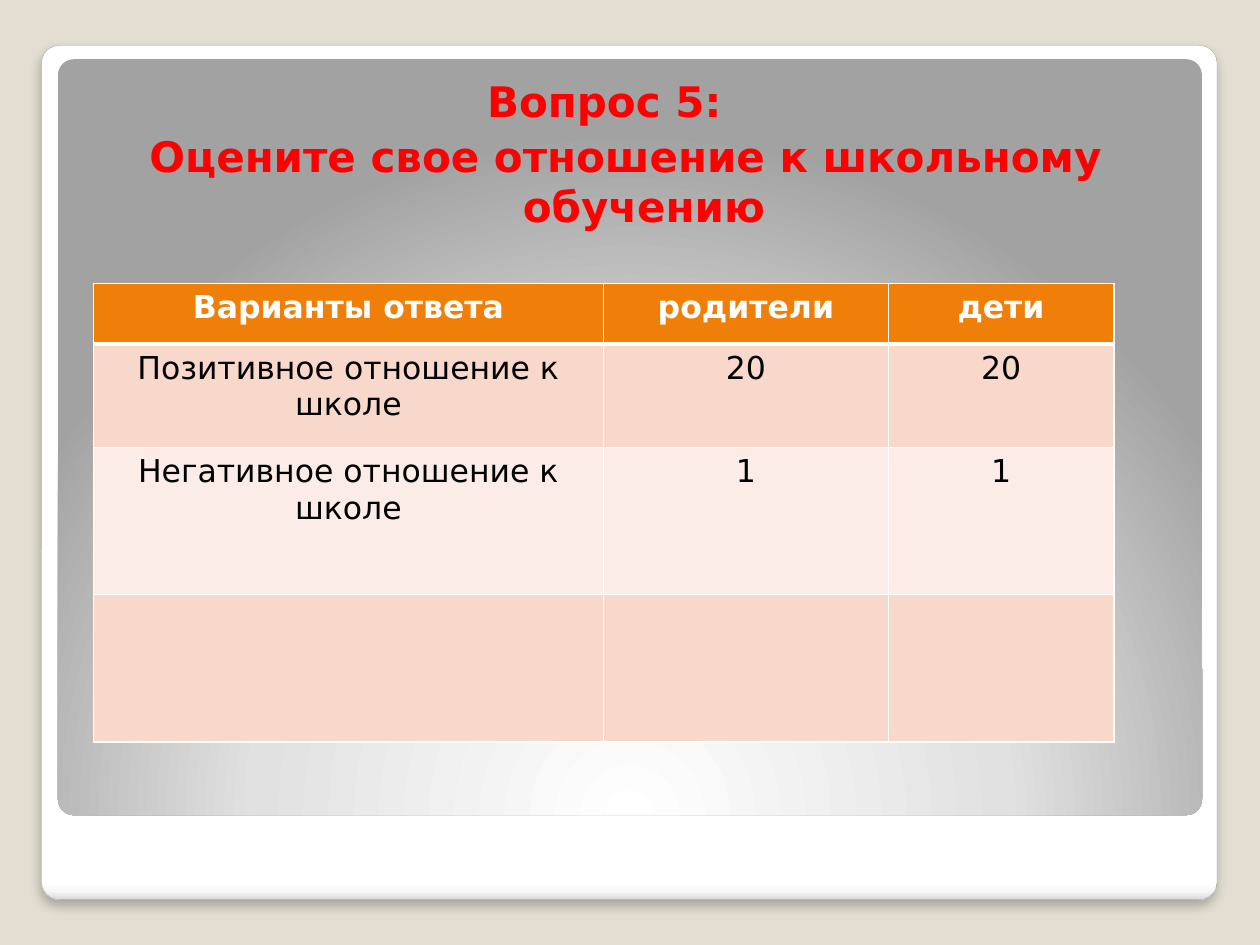
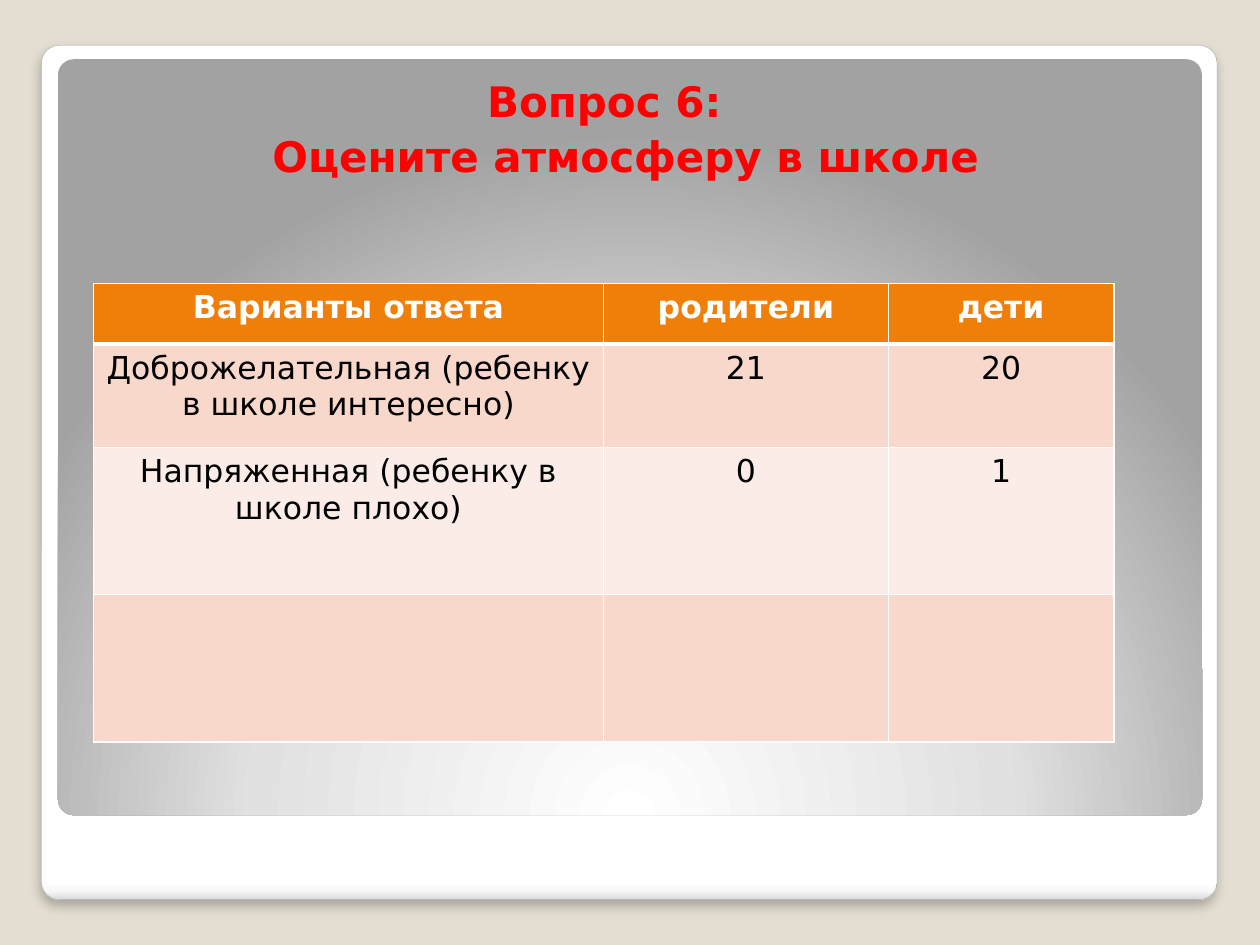
"""Build two survey slides, each with a question and a table of answers."""
from pptx import Presentation
from pptx.dml.color import RGBColor
from pptx.enum.shapes import MSO_SHAPE
from pptx.enum.text import PP_ALIGN
from pptx.oxml import parse_xml
from pptx.oxml.ns import nsdecls
from pptx.util import Inches, Pt

ROUND = MSO_SHAPE.ROUNDED_RECTANGLE
CENTER = PP_ALIGN.CENTER
FONT = "DejaVu Sans"
C = {"back": "E3DED1", "edge": "A4A4A4", "title": "FF0000", "head": "F07F09",
     "odd": "F9D8CC", "even": "FCECE7", "white": "FFFFFF", "black": "000000"}

FRAMES = [
    {"at": (0.33, 0.36, 9.33, 6.78), "edge": True,
     "stops": [(0, "FFFFFF"), (98, "FFFFFF"), (99, "F7F7F7"), (100, "DADADA")],
     "shade": '<a:lin ang="5400000" scaled="0"/>'},
    {"at": (0.46, 0.47, 9.08, 6), "edge": False,
     "stops": [(0, "FFFFFF"), (55, "E1E1E1"), (100, "A2A2A2")],
     "shade": '<a:path path="circle"><a:fillToRect l="50000" t="175000" '
              'r="50000" b="-75000"/></a:path>'},
]
COLS = [4.05, 2.26, 1.79]
ROWS = [0.48, 0.82, 1.17, 1.17]
HEADER = ("Варианты ответа", "родители", "дети")
QUESTIONS = [
    ("Вопрос 5:", "Оцените свое отношение к школьному обучению",
     [("Позитивное отношение к школе", "20", "20"),
      ("Негативное отношение к школе", "1", "1")]),
    ("Вопрос 6:", "Оцените атмосферу в школе",
     [("Доброжелательная (ребенку в школе интересно)", "21", "20"),
      ("Напряженная (ребенку в школе плохо)", "0", "1")]),
]


def xml(tag, attrs, inner):
    return parse_xml(f'<a:{tag} {nsdecls("a")} {attrs}>{inner}</a:{tag}>')


def write(p, text, size, color, bold):
    p.alignment = CENTER
    r = p.add_run()
    r.text = text
    for name, value in {"name": FONT, "size": Pt(size), "bold": bold}.items():
        setattr(r.font, name, value)
    r.font.color.rgb = RGBColor.from_string(C[color])


prs = Presentation()
prs.slide_width, prs.slide_height = Inches(10), Inches(7.5)

for number, question, answers in QUESTIONS:
    s = prs.slides.add_slide(prs.slide_layouts[6])
    s.background.fill.solid()
    s.background.fill.fore_color.rgb = RGBColor.from_string(C["back"])

    for frame in FRAMES:
        sp = s.shapes.add_shape(ROUND, *map(Inches, frame["at"]))
        sp.adjustments[0] = 0.021
        sp.shadow.inherit = False
        sp.fill.background()
        stops = "".join(f'<a:gs pos="{pos * 1000}"><a:srgbClr val="{color}"/></a:gs>'
                        for pos, color in frame["stops"])
        props = sp.element.spPr
        props.replace(props.find("{*}noFill"),
                      xml("gradFill", 'rotWithShape="1"', f"<a:gsLst>{stops}</a:gsLst>{frame['shade']}"))
        if frame["edge"]:
            sp.line.color.rgb = RGBColor.from_string(C["edge"])
            sp.line.width = Pt(0.16)
            props.find("{*}effectLst").append(
                xml("outerShdw", f'blurRad="{Pt(6)}" dist="{Pt(4)}" dir="5400000" rotWithShape="0"',
                    f'<a:srgbClr val="{C["black"]}"><a:alpha val="25000"/></a:srgbClr>'))
        else:
            sp.line.fill.background()

    tf = s.shapes.add_textbox(*map(Inches, (0.33, 0.5, 9.17, 6.42))).text_frame
    tf.word_wrap = True
    for side, inset in {"left": 0.2, "top": 0.1, "right": 0.1, "bottom": 0.05}.items():
        setattr(tf, f"margin_{side}", Inches(inset))
    for p, text, right in ((tf.paragraphs[0], number, 0.34), (tf.add_paragraph(), question, 0)):
        write(p, text, 24, "title", True)
        p.space_before = Pt(2.5)
        for name, value in {"marL": 0.29, "marR": right, "indent": -0.29}.items():
            p._p.get_or_add_pPr().set(name, str(Inches(value)))

    table = s.shapes.add_table(len(ROWS), len(COLS), *map(Inches, (0.74, 2.25, sum(COLS), sum(ROWS)))).table
    table.first_row = table.horz_banding = False
    for col, width in zip(table.columns, COLS):
        col.width = Inches(width)
    for i, (row, height, texts) in enumerate(zip(table.rows, ROWS, [HEADER, *answers, ("", "", "")])):
        row.height = Inches(height)
        fill = "head" if i == 0 else "odd" if i % 2 else "even"
        for cell, text in zip(row.cells, texts):
            cell.fill.solid()
            cell.fill.fore_color.rgb = RGBColor.from_string(C[fill])
            widths = {"L": 1, "R": 1, "T": 3 if i == 1 else 1, "B": 3 if i == 0 else 1}
            for k, (side, width) in enumerate(widths.items()):
                cell._tc.tcPr.insert(k, xml(
                    f"ln{side}", f'w="{Pt(width)}"',
                    f'<a:solidFill><a:srgbClr val="{C["white"]}"/></a:solidFill>'))
            if text:
                write(cell.text_frame.paragraphs[0], text, 18, "black" if i else "white", i == 0)

prs.save("out.pptx")
